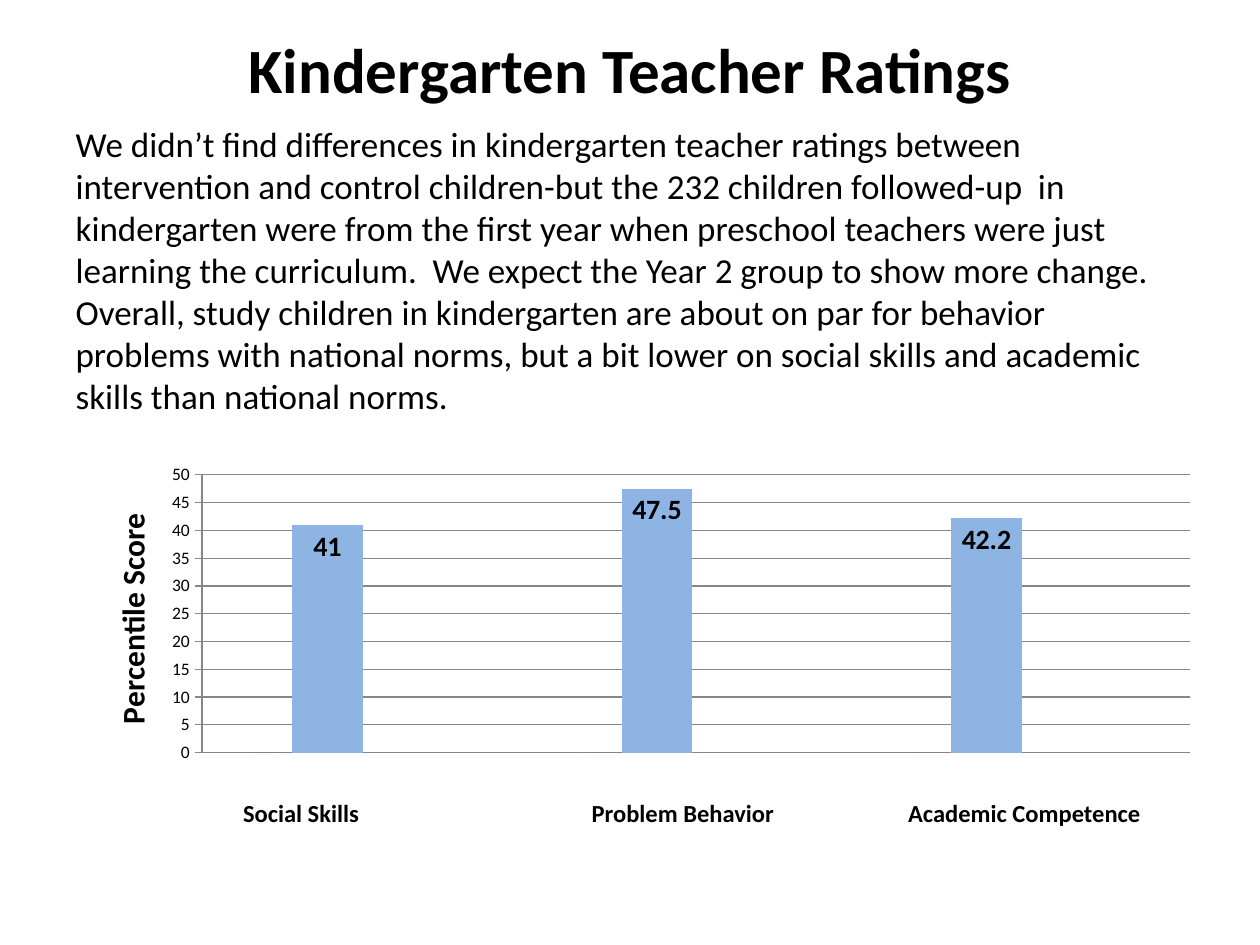
import pptx
import pptx.chart.data
import pptx.dml.color
import pptx.enum.chart
import pptx.enum.text
import pptx.oxml
import pptx.oxml.ns
import pptx.util
from pptx.util import Inches

COLORS = {
    "text": "000000",
    "grid": "878787",
    "blue": "4F81BD",
    "red": "C0504D",
    "sky": "8EB4E3",
}
FONT = "Calibri"
TITLE = "Kindergarten Teacher Ratings"
FINDINGS = (
    "We didn’t find differences in kindergarten teacher ratings between "
    "intervention and control children-but the 232 children followed-up  in "
    "kindergarten were from the first year when preschool teachers were just "
    "learning the curriculum.  We expect the Year 2 group to show more change. "
    "Overall, study children in kindergarten are about on par for behavior "
    "problems with national norms, but a bit lower on social skills and academic "
    "skills than national norms."
)
SERIES = [
    ("Series 1", [0, None, None, None, None, None], "blue"),
    ("Series 2", [0, None, 0, None, 0, None], "red"),
    ("Series 3", [41, None, 47.5, None, 42.2, None], "sky"),
]
MEASURES = [
    ("Social Skills", 2.39),
    ("Problem Behavior", 5.42),
    ("Academic Competence", 8.13),
]


def color(name):
    return pptx.dml.color.RGBColor.from_string(COLORS[name])


def style_font(font, size, bold=False):
    font.name = FONT
    font.size = pptx.util.Pt(size)
    font.bold = bold
    font.color.rgb = color("text")


def place(shape, left, top, width, height):
    shape.left, shape.top = Inches(left), Inches(top)
    shape.width, shape.height = Inches(width), Inches(height)


def fill_title(box):
    place(box, 0.5, -0.08, 9, 1.25)
    frame = box.text_frame
    frame.text = TITLE
    frame.auto_size = pptx.enum.text.MSO_AUTO_SIZE.NONE
    frame.vertical_anchor = pptx.enum.text.MSO_ANCHOR.MIDDLE
    para = frame.paragraphs[0]
    para.alignment = pptx.enum.text.PP_ALIGN.CENTER
    style_font(para.font, 36, True)


def fill_body(box):
    place(box, 0.5, 0.92, 9, 5)
    frame = box.text_frame
    frame.text = FINDINGS
    frame.auto_size = pptx.enum.text.MSO_AUTO_SIZE.NONE
    para = frame.paragraphs[0]
    para.space_before = pptx.util.Pt(0)
    properties = para._p.get_or_add_pPr()
    properties.set("marL", "0")
    properties.set("indent", "0")
    properties.append(properties.makeelement(pptx.oxml.ns.qn("a:buNone"), {}))
    style_font(para.font, 20)


def layout_xml(**values):
    entries = "".join(f'<c:{key} val="{value}"/>' for key, value in values.items())
    return pptx.oxml.parse_xml(
        f'<c:layout {pptx.oxml.ns.nsdecls("c")}>'
        f"<c:manualLayout>{entries}</c:manualLayout></c:layout>"
    )


def set_layout(element, following, **values):
    for old in element.findall(pptx.oxml.ns.qn("c:layout")):
        element.remove(old)
    anchor = element.find(pptx.oxml.ns.qn(following))
    if anchor is None:
        element.append(layout_xml(**values))
    else:
        anchor.addprevious(layout_xml(**values))


def style_value_axis(axis):
    axis.minimum_scale, axis.maximum_scale, axis.major_unit = 0, 50, 5
    axis.major_tick_mark = pptx.enum.chart.XL_TICK_MARK.OUTSIDE
    axis.has_major_gridlines = True
    for line in (axis.format.line, axis.major_gridlines.format.line):
        line.color.rgb = color("grid")
        line.width = pptx.util.Pt(0.75)
    style_font(axis.tick_labels.font, 10)
    axis.tick_labels.number_format = "General"
    axis.tick_labels.number_format_is_linked = False
    title = axis.axis_title
    title.text_frame.text = "Percentile Score"
    style_font(title.text_frame.paragraphs[0].font, 18, True)
    set_layout(title._element, "c:overlay", xMode="edge", yMode="edge", x=0.03, y=0.13)


def add_ratings_chart(page):
    data = pptx.chart.data.CategoryChartData()
    data.categories = ["1", "2", "3", "4", "5", "6"]
    for name, values, _ in SERIES:
        data.add_series(name, values)
    chart = page.shapes.add_chart(
        pptx.enum.chart.XL_CHART_TYPE.COLUMN_CLUSTERED,
        Inches(0.56), Inches(3.64), Inches(9.07), Inches(3), data,
    ).chart
    chart.has_legend = False
    chart.has_title = False
    style_font(chart.font, 10)
    chart.category_axis.visible = False
    style_value_axis(chart.value_axis)

    plot = chart.plots[0]
    plot.vary_by_categories = False
    plot.gap_width, plot.overlap = 11, 39
    for series, (_, _, fill) in zip(plot.series, SERIES):
        series.format.fill.solid()
        series.format.fill.fore_color.rgb = color(fill)
    labels = plot.series[2].data_labels
    labels.show_value = True
    labels.position = pptx.enum.chart.XL_LABEL_POSITION.INSIDE_END
    style_font(labels.font, 16, True)
    set_layout(
        chart._chartSpace.chart.plotArea, "c:barChart",
        layoutTarget="inner", xMode="edge", yMode="edge",
        x=0.115, y=0.043, w=0.865, h=0.735,
    )


def add_measure_label(page, text, center):
    width, height = 2.4, 0.34
    box = page.shapes.add_textbox(
        Inches(center - width / 2), Inches(6.28), Inches(width), Inches(height)
    )
    frame = box.text_frame
    frame.word_wrap = True
    frame.vertical_anchor = pptx.enum.text.MSO_ANCHOR.MIDDLE
    frame.text = text
    para = frame.paragraphs[0]
    para.alignment = pptx.enum.text.PP_ALIGN.CENTER
    style_font(para.font, 14, True)


def main():
    deck = pptx.Presentation()
    deck.slide_width, deck.slide_height = Inches(10), Inches(7.5)
    page = deck.slides.add_slide(deck.slide_layouts[1])
    fill_title(page.shapes.title)
    fill_body(page.placeholders[1])
    add_ratings_chart(page)
    for text, center in MEASURES:
        add_measure_label(page, text, center)
    deck.save("out.pptx")


if __name__ == "__main__":
    main()
